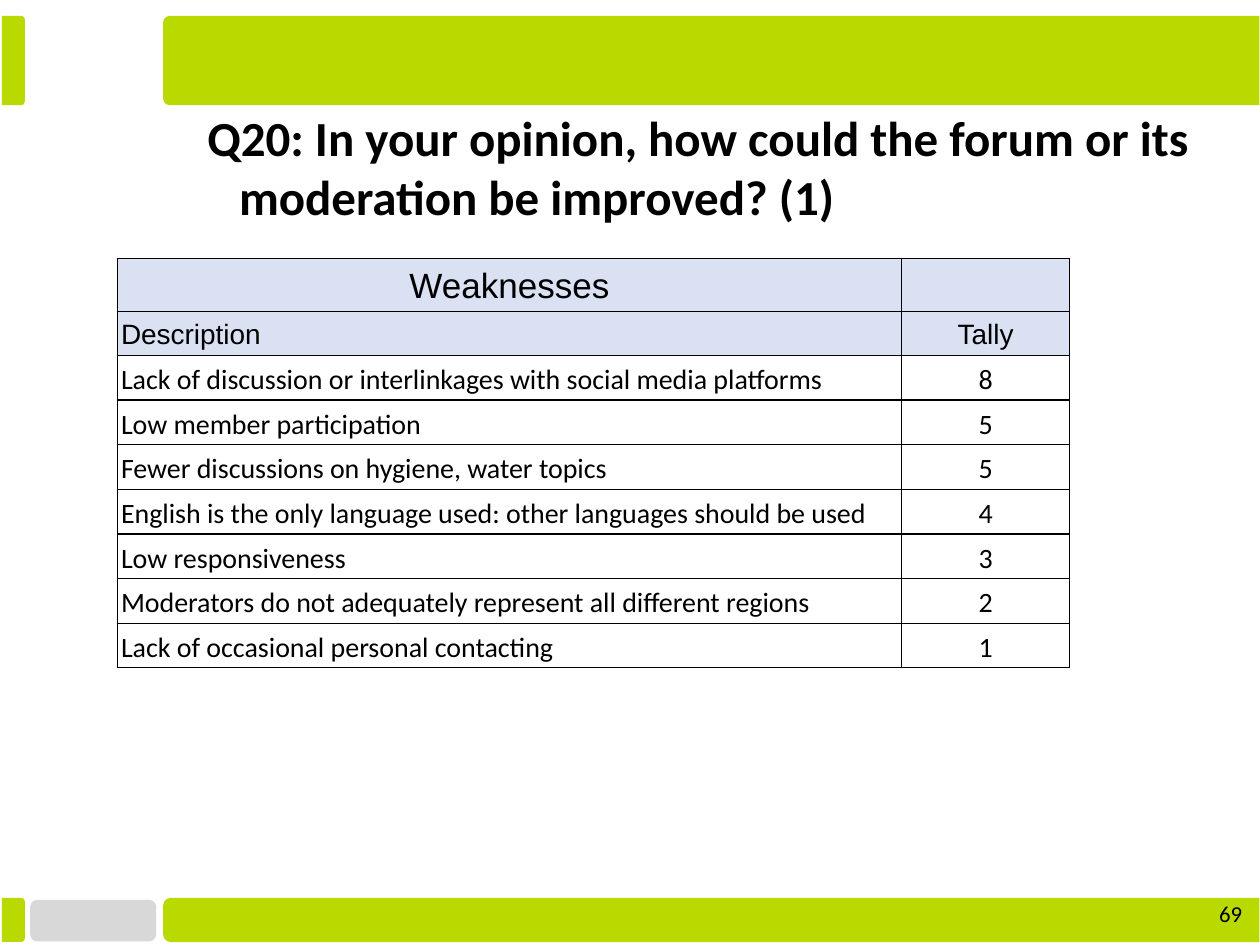
from lxml.etree import SubElement
from pptx import Presentation
from pptx.dml.color import RGBColor
from pptx.enum.shapes import MSO_SHAPE
from pptx.enum.text import MSO_ANCHOR, PP_ALIGN
from pptx.oxml.ns import qn
from pptx.util import Cm, Pt

GREEN, GREY, HEADER_BLUE, BLACK = "BAD900", "D8D8D8", "D9E1F2", "000000"

WEAKNESSES = [
    ("Lack of discussion or interlinkages with social media platforms", 8),
    ("Low member participation", 5),
    ("Fewer discussions on hygiene, water topics", 5),
    ("English is the only language used: other languages should be used", 4),
    ("Low responsiveness", 3),
    ("Moderators do not adequately represent all different regions", 2),
    ("Lack of occasional personal contacting", 1),
]


def color(value):
    return RGBColor.from_string(value)


def write(frame, text, size, font="Calibri", bold=False, align=PP_ALIGN.LEFT,
          spacing=None, hanging=None):
    """Fill a text frame with one paragraph; hanging is (margin, indent)."""
    frame.word_wrap = True
    para = frame.paragraphs[0]
    para.alignment = align
    if spacing:
        para.line_spacing = spacing
    if hanging:
        properties = para._p.get_or_add_pPr()
        margin, indent = hanging
        properties.set("marL", str(margin))
        properties.set("indent", str(indent))
    span = para.add_run()
    span.text = text
    span.font.name = font
    span.font.size = Pt(size)
    span.font.bold = bold
    span.font.color.rgb = color(BLACK)


def add_text(page, left, top, width, height, text, size,
             anchor=MSO_ANCHOR.TOP, **text_format):
    box = page.shapes.add_textbox(Cm(left), Cm(top), Cm(width), Cm(height))
    box.text_frame.vertical_anchor = anchor
    write(box.text_frame, text, size, **text_format)


def add_block(page, kind, left, top, width, height, fill, corners):
    block = page.shapes.add_shape(kind, Cm(left), Cm(top), Cm(width), Cm(height))
    block.shadow.inherit = False
    block.fill.solid()
    block.fill.fore_color.rgb = color(fill)
    block.line.fill.background()
    for index, corner in enumerate(corners):
        block.adjustments[index] = corner
    return block


def add_bar(page, left, top, width, height, rotation, corner):
    """Place a bar by its visible bounds; its rounded end follows the rotation."""
    bar = add_block(page, MSO_SHAPE.ROUND_2_SAME_RECTANGLE,
                    left + (width - height) / 2, top + (height - width) / 2,
                    height, width, GREEN, (corner, 0))
    bar.rotation = rotation


def add_frame(page):
    add_block(page, MSO_SHAPE.ROUNDED_RECTANGLE, 0.61, 18.14, 2.54, 0.84,
              GREY, (0.167,))
    for top, height, corner in ((18.1, 0.89, 0.167), (0.32, 1.8, 0.073)):
        add_bar(page, 3.29, top, 22.1, height, 270, corner)
        add_bar(page, 0.04, top, 0.46, height, 90, 0.167)


def add_borders(cell):
    properties = cell._tc.get_or_add_tcPr()
    for side in ("lnL", "lnR", "lnT", "lnB"):
        line = SubElement(properties, qn(f"a:{side}"), w=str(Pt(0.75)))
        fill = SubElement(line, qn("a:solidFill"))
        SubElement(fill, qn("a:srgbClr"), val=BLACK)


def format_cell(cell, text, size, font, align, fill):
    cell.margin_left = cell.margin_right = Cm(0.08)
    cell.margin_top = cell.margin_bottom = Cm(0.05)
    add_borders(cell)
    if fill:
        cell.fill.solid()
        cell.fill.fore_color.rgb = color(fill)
    else:
        cell.fill.background()
    if text:
        write(cell.text_frame, text, size, font=font, align=align, spacing=1.15)


def add_weakness_table(page):
    rows = [("Weaknesses", ""), ("Description", "Tally"), *WEAKNESSES]
    heights = [1.01, 0.83] + [0.9] * len(WEAKNESSES)
    widths = [15.82, 3.38]
    table = page.shapes.add_table(len(rows), len(widths), Cm(2.36), Cm(5.21),
                                  Cm(sum(widths)), Cm(sum(heights))).table
    table.first_row = table.horz_banding = False
    for column, width in zip(table.columns, widths):
        column.width = Cm(width)
    for row, values in enumerate(rows):
        table.rows[row].height = Cm(heights[row])
        is_header = row < 2
        for column, value in enumerate(values):
            centred = row == 0 or column == 1
            format_cell(table.cell(row, column), str(value),
                        size=20 if row == 0 else 16,
                        font="Arial" if is_header else "Calibri",
                        align=PP_ALIGN.CENTER if centred else PP_ALIGN.LEFT,
                        fill=HEADER_BLUE if is_header else None)


def main():
    deck = Presentation()
    deck.slide_width, deck.slide_height = Cm(25.4), Cm(19.05)
    page = deck.slides.add_slide(deck.slide_layouts[6])
    add_frame(page)
    add_text(page, 3.3, 2.55, 21.2, 1.6,
             "Q20: In your opinion, how could the forum or its moderation "
             "be improved? (1)", 28, anchor=MSO_ANCHOR.MIDDLE, bold=True,
             hanging=(Cm(1.27), Cm(-0.64)))
    add_text(page, 23.77, 18.01, 1.52, 1.45, "69", 13, align=PP_ALIGN.RIGHT)
    add_weakness_table(page)
    deck.save("out.pptx")


if __name__ == "__main__":
    main()
